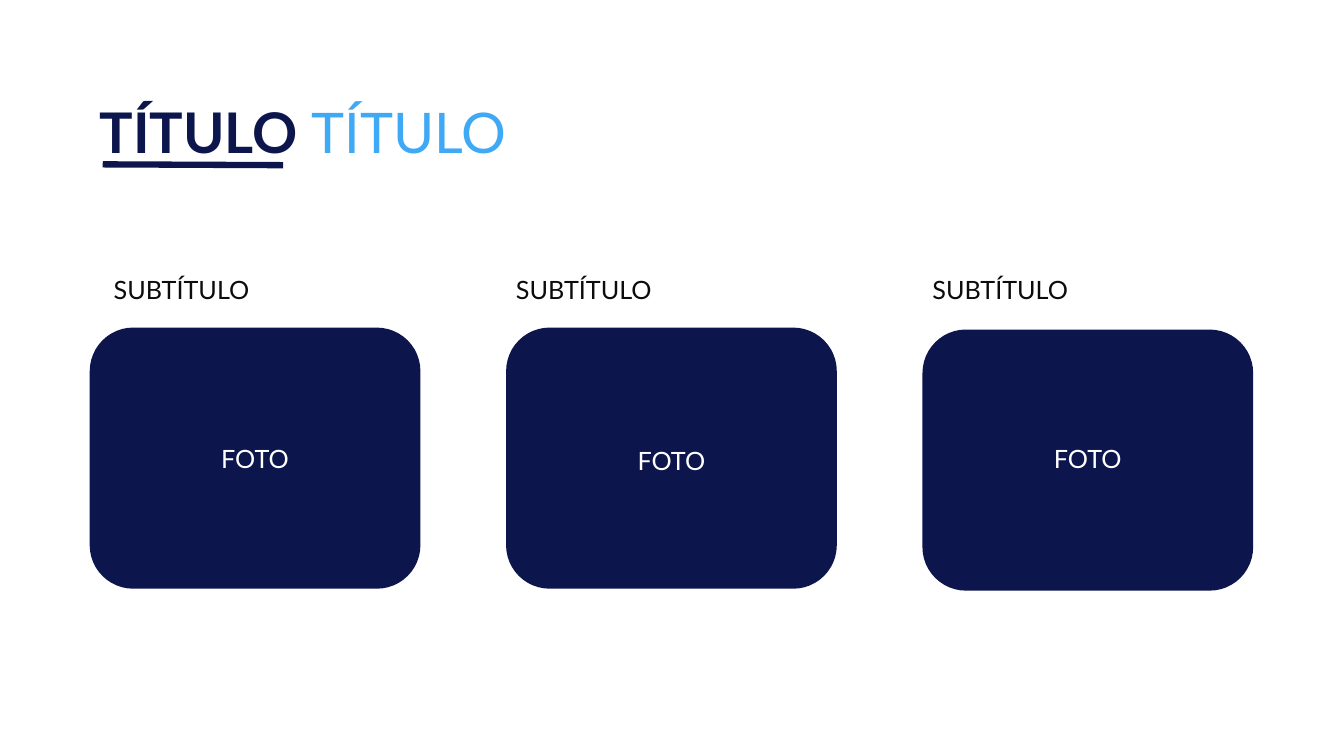
from dataclasses import dataclass

from lxml import etree
from pptx import Presentation
from pptx.dml.color import RGBColor
from pptx.enum import shapes, text
from pptx.oxml import ns
from pptx.util import Pt


@dataclass(frozen=True)
class Theme:
    font: str = "Lato"
    navy: str = "0C154C"
    sky: str = "3FA9F5"
    ink: str = "0C0C0C"
    white: str = "FFFFFF"
    title_size: int = 40
    label_size: int = 18
    rule_width: float = 4.5


THEME = Theme()


def add_run(paragraph, words, *, size, color, bold=False):
    run = paragraph.add_run()
    run.text = words
    run.font.name = THEME.font
    run.font.size = Pt(size)
    run.font.bold = bold
    run.font.color.rgb = RGBColor.from_string(color)


def fit_frame(shape, wrap=True):
    frame = shape.text_frame
    frame.word_wrap = wrap
    frame.auto_size = text.MSO_AUTO_SIZE.SHAPE_TO_FIT_TEXT
    frame.vertical_anchor = text.MSO_ANCHOR.TOP
    return frame


def add_label(slide, words, left, top, width, *, color, align=text.PP_ALIGN.LEFT):
    box = slide.shapes.add_textbox(Pt(left), Pt(top), Pt(width), Pt(29))
    paragraph = fit_frame(box).paragraphs[0]
    paragraph.alignment = align
    add_run(paragraph, words, size=THEME.label_size, color=color)


def add_title(slide, left, top, width, height):
    # Two-tone title
    title = slide.shapes.title
    title.left, title.top = Pt(left), Pt(top)
    title.width, title.height = Pt(width), Pt(height)
    paragraph = fit_frame(title).paragraphs[0]
    paragraph.alignment = text.PP_ALIGN.LEFT
    add_run(paragraph, "TÍTULO ", size=THEME.title_size, color=THEME.navy, bold=True)
    add_run(paragraph, "TÍTULO", size=THEME.title_size, color=THEME.sky)

    # Rule under the first word
    rule = slide.shapes.add_connector(
        shapes.MSO_CONNECTOR.STRAIGHT,
        Pt(left + 9.4), Pt(top + 51.2), Pt(left + 138.2), Pt(top + 51.8),
    )
    rule.line.color.rgb = RGBColor.from_string(THEME.navy)
    rule.line.width = Pt(THEME.rule_width)
    properties = rule.element.find(ns.qn("p:spPr"))
    etree.SubElement(properties, ns.qn("a:effectLst"))


def add_photo_card(slide, left, top, width, height, *, caption_top, subtitle_left, subtitle_top):
    # Rounded photo area
    card = slide.shapes.add_shape(
        shapes.MSO_SHAPE.ROUNDED_RECTANGLE, Pt(left), Pt(top), Pt(width), Pt(height)
    )
    card.shadow.inherit = False
    card.fill.solid()
    card.fill.fore_color.rgb = RGBColor.from_string(THEME.navy)
    card.line.fill.background()

    # Caption inside, subtitle above
    inset = 20
    add_label(slide, "FOTO", left + inset, top + caption_top, width - 2 * inset,
              color=THEME.white, align=text.PP_ALIGN.CENTER)
    add_label(slide, "SUBTÍTULO", left + subtitle_left, subtitle_top, 128, color=THEME.ink)


def main():
    presentation = Presentation()
    presentation.slide_width, presentation.slide_height = Pt(960), Pt(540)
    slide = presentation.slides.add_slide(presentation.slide_layouts[5])

    add_title(slide, 64, 66.2, 317.5, 55.7)

    # Row of three cards: top, caption offset, subtitle indent
    first_left, pitch = 64.1, 297.4
    cards = [(234, 79.2, 10), (234, 80.6, 0), (235.4, 77.8, 0)]
    for column, (top, caption_top, indent) in enumerate(cards):
        add_photo_card(slide, first_left + column * pitch, top, 236.2, 186.5,
                       caption_top=caption_top, subtitle_left=indent, subtitle_top=192.2)

    presentation.save("out.pptx")


if __name__ == "__main__":
    main()
